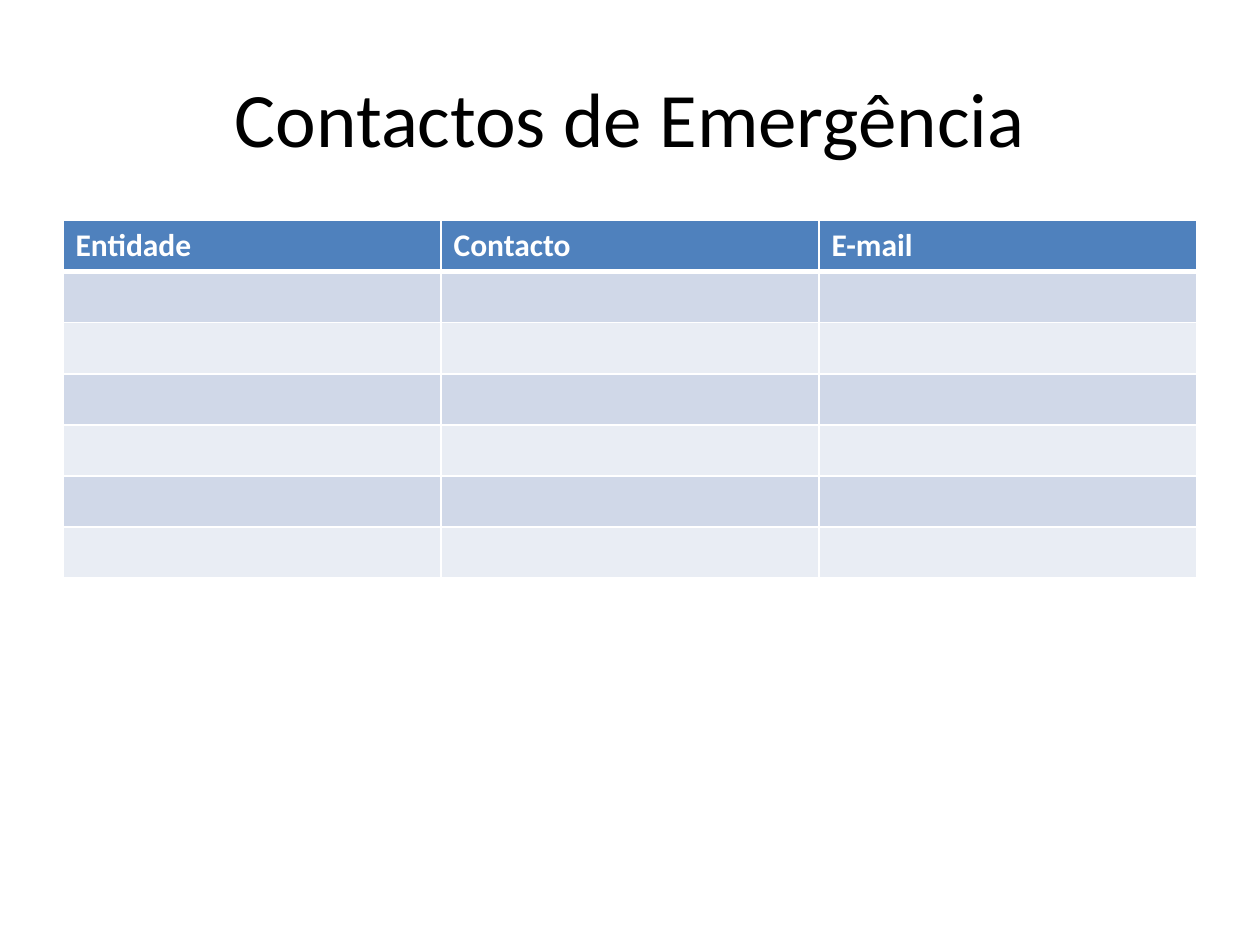
import pptx
import pptx.util
import pptx.dml.color
import pptx.enum.text
import pptx.oxml
import pptx.oxml.ns

Inches = pptx.util.Inches
Pt = pptx.util.Pt
HEADS = ["Entidade", "Contacto", "E-mail"]
ROWS = 7
WHITE = "FFFFFF"
BLUE = "4F81BD"
BANDS = ["E9EDF4", "D0D8E8"]


def color(code):
    return pptx.dml.color.RGBColor.from_string(code)


def write(para, text, size, code, bold=False):
    run = para.add_run()
    run.text = text
    run.font.name = "Calibri"
    run.font.size = Pt(size)
    run.font.bold = bold
    run.font.color.rgb = color(code)


def border(cell, side, width):
    line = pptx.oxml.parse_xml(
        f'<a:ln{side} {pptx.oxml.ns.nsdecls("a")} w="{Pt(width)}">'
        f'<a:solidFill><a:srgbClr val="{WHITE}"/></a:solidFill></a:ln{side}>'
    )
    cell._tc.get_or_add_tcPr().append(line)


def add_title(slide, left, top, width, height):
    box = slide.shapes.add_textbox(Inches(left), Inches(top), Inches(width), Inches(height))
    frame = box.text_frame
    frame.word_wrap = True
    frame.vertical_anchor = pptx.enum.text.MSO_ANCHOR.MIDDLE
    para = frame.paragraphs[0]
    para.alignment = pptx.enum.text.PP_ALIGN.CENTER
    write(para, "Contactos de Emergência", 44, "000000")


def add_contacts(slide, left, top, width, height):
    table = slide.shapes.add_table(
        ROWS, len(HEADS), Inches(left), Inches(top), Inches(width), Inches(height)
    ).table
    for row in range(ROWS):
        for col, head in enumerate(HEADS):
            cell = table.cell(row, col)
            for side in "LRTB":
                thick = (row, side) in [(0, "B"), (1, "T")]
                border(cell, side, 3 if thick else 1)
            cell.fill.solid()
            cell.fill.fore_color.rgb = color(BANDS[row % 2] if row else BLUE)
            if row == 0:
                write(cell.text_frame.paragraphs[0], head, 18, WHITE, True)


def main():
    deck = pptx.Presentation()
    deck.slide_width = Inches(10)
    deck.slide_height = Inches(7.5)
    slide = deck.slides.add_slide(deck.slide_layouts[6])
    add_title(slide, 0.5, 0.3, 9, 1.25)
    add_contacts(slide, 0.5, 1.75, 9, 2.84)
    deck.save("out.pptx")


if __name__ == "__main__":
    main()
